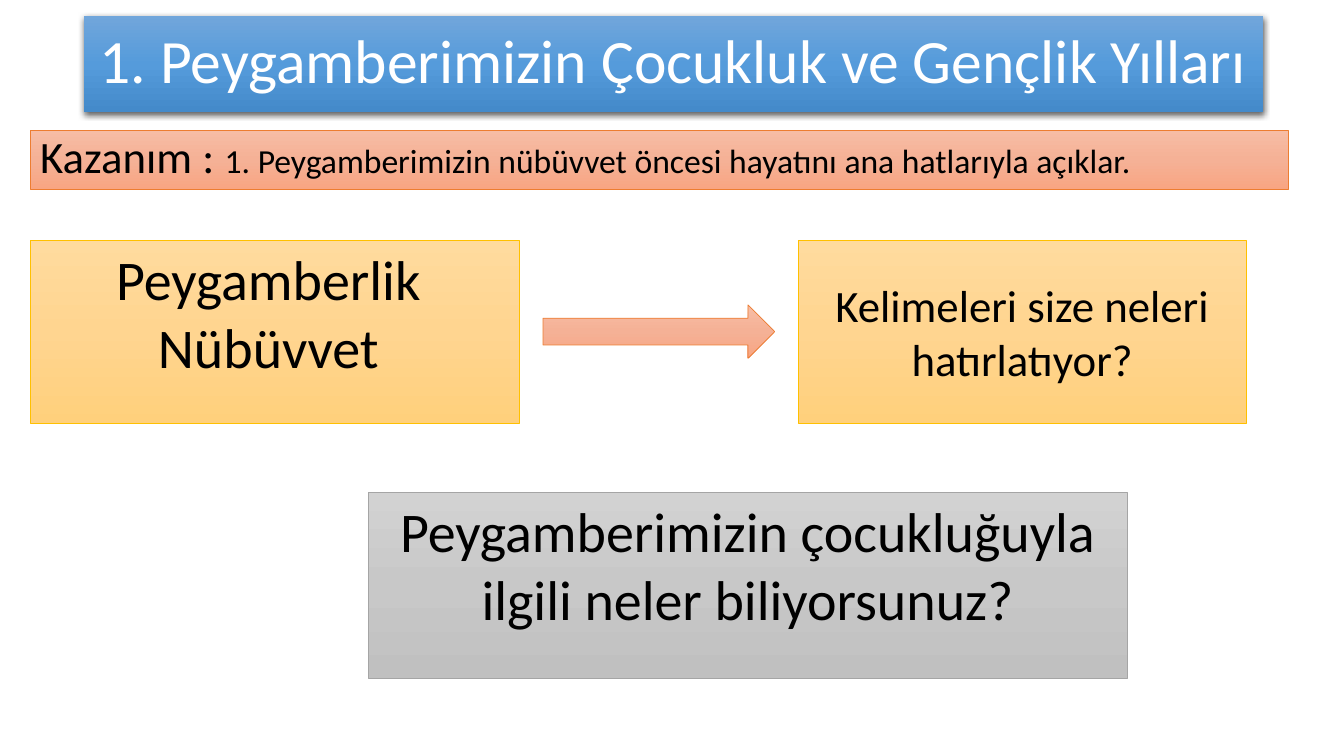
"""Build the lesson opening slide on the Prophet's childhood and youth."""
from copy import deepcopy

from lxml.etree import SubElement
from pptx import Presentation
from pptx.dml.color import RGBColor
from pptx.enum.shapes import MSO_SHAPE as Shape
from pptx.enum.text import MSO_ANCHOR as Anchor, PP_ALIGN as Align
from pptx.oxml.ns import qn
from pptx.util import Inches, Pt

TITLE = [[("1. Peygamberimizin Çocukluk ve Gençlik Yılları ", "title")]]
GOAL = [[("Kazanım : ", "medium"),
         ("1. Peygamberimizin nübüvvet öncesi hayatını ana hatlarıyla açıklar.", "small")]]
TERMS = [[("Peygamberlik ", "large")], [("Nübüvvet ", "large")]]
QUESTION = [[("Peygamberimizin çocukluğuyla ilgili neler biliyorsunuz?", "large")]]
PROMPT = [[("Kelimeleri size neleri hatırlatıyor?", "medium")]]

THEME = {
    "font": "Calibri",
    "sizes": {"title": 44, "large": 40, "medium": 32, "small": 24},
    "text": "000000",
    "title text": "FFFFFF",
    "shadow": "000000",
    "blue": (("71A6DB", "559BDB", "448ACA"), None),
    "orange": (("F7BDA5", "F5B196", "F8A582"), "ED7D31"),
    "gold": (("FFDB9E", "FFD590", "FFD07C"), "FFC000"),
    "gray": (("D2D2D2", "C8C8C8", "C0C0C0"), "A5A5A5"),
}

WIDTH, HEIGHT = Inches(13.33), Inches(7.5)
MARGIN = 2.25
ROW_TOP, ROW_HEIGHT = 31.73, 24.27
TERMS_WIDTH = 36.38
PROMPT_LEFT, PROMPT_WIDTH = 59.41, 33.31
ARROW_GAP, ARROW_HEIGHT = 1.77, 7.07


def add_panel(slide, kind, box, color):
    """Add a gradient shape whose box is given in percent of the slide."""
    left, top, width, height = box
    shape = slide.shapes.add_shape(
        kind, int(WIDTH * left / 100), int(HEIGHT * top / 100),
        int(WIDTH * width / 100), int(HEIGHT * height / 100))
    shape.shadow.inherit = False
    stop_colors, line_color = THEME[color]
    shape.fill.gradient()
    shape.fill.gradient_angle = 270
    stop_list = shape._element.spPr.find(".//" + qn("a:gsLst"))
    stop_list.insert(1, deepcopy(stop_list[0]))
    for index, stop in enumerate(shape.fill.gradient_stops):
        stop.position = index / 2
        stop.color.rgb = RGBColor.from_string(stop_colors[index])
    if line_color:
        shape.line.color.rgb = RGBColor.from_string(line_color)
        shape.line.width = Pt(0.5)
    else:
        shape.line.fill.background()
    return shape


def add_shadow(shape):
    """Drop a soft shadow straight below the shape."""
    effects = shape._element.spPr.find(qn("a:effectLst"))
    shadow = SubElement(effects, qn("a:outerShdw"), blurRad=str(Pt(4.5)),
                        dist=str(Pt(1.5)), dir="5400000", algn="ctr", rotWithShape="0")
    color = SubElement(shadow, qn("a:srgbClr"), val=THEME["shadow"])
    SubElement(color, qn("a:alpha"), val="63000")


def write_text(shape, paragraphs, align=Align.CENTER, anchor=Anchor.TOP,
               color="text", line_spacing=None, space_before=None):
    """Write paragraphs of (text, size name) runs into the shape."""
    frame = shape.text_frame
    frame.word_wrap = True
    frame.vertical_anchor = anchor
    for index, runs in enumerate(paragraphs):
        paragraph = frame.add_paragraph() if index else frame.paragraphs[0]
        paragraph.alignment = align
        paragraph.line_spacing = line_spacing
        paragraph.space_before = space_before
        for text, size in runs:
            run = paragraph.add_run()
            run.text = text
            run.font.name = THEME["font"]
            run.font.size = Pt(THEME["sizes"][size])
            run.font.color.rgb = RGBColor.from_string(THEME[color])


def main():
    """Compose the slide and save it."""
    presentation = Presentation()
    presentation.slide_width, presentation.slide_height = WIDTH, HEIGHT
    slide = presentation.slides.add_slide(presentation.slide_layouts[6])

    title = add_panel(slide, Shape.RECTANGLE, (6.23, 2.13, 87.77, 12.67), "blue")
    add_shadow(title)
    write_text(title, TITLE, anchor=Anchor.MIDDLE, color="title text", line_spacing=0.9)

    goal = add_panel(slide, Shape.RECTANGLE, (MARGIN, 17.2, 93.62, 7.87), "orange")
    write_text(goal, GOAL, align=Align.LEFT, line_spacing=0.9, space_before=Pt(10))

    terms = add_panel(slide, Shape.RECTANGLE,
                      (MARGIN, ROW_TOP, TERMS_WIDTH, ROW_HEIGHT), "gold")
    write_text(terms, TERMS)

    question = add_panel(slide, Shape.RECTANGLE, (27.38, 65.07, 56.49, 24.67), "gray")
    write_text(question, QUESTION)

    prompt = add_panel(slide, Shape.RECTANGLE,
                       (PROMPT_LEFT, ROW_TOP, PROMPT_WIDTH, ROW_HEIGHT), "gold")
    write_text(prompt, PROMPT, anchor=Anchor.MIDDLE)

    arrow_left = MARGIN + TERMS_WIDTH + ARROW_GAP
    arrow_top = ROW_TOP + (ROW_HEIGHT - ARROW_HEIGHT) / 2
    arrow_width = PROMPT_LEFT - ARROW_GAP - arrow_left
    add_panel(slide, Shape.RIGHT_ARROW,
              (arrow_left, arrow_top, arrow_width, ARROW_HEIGHT), "orange")

    presentation.save("out.pptx")


if __name__ == "__main__":
    main()
